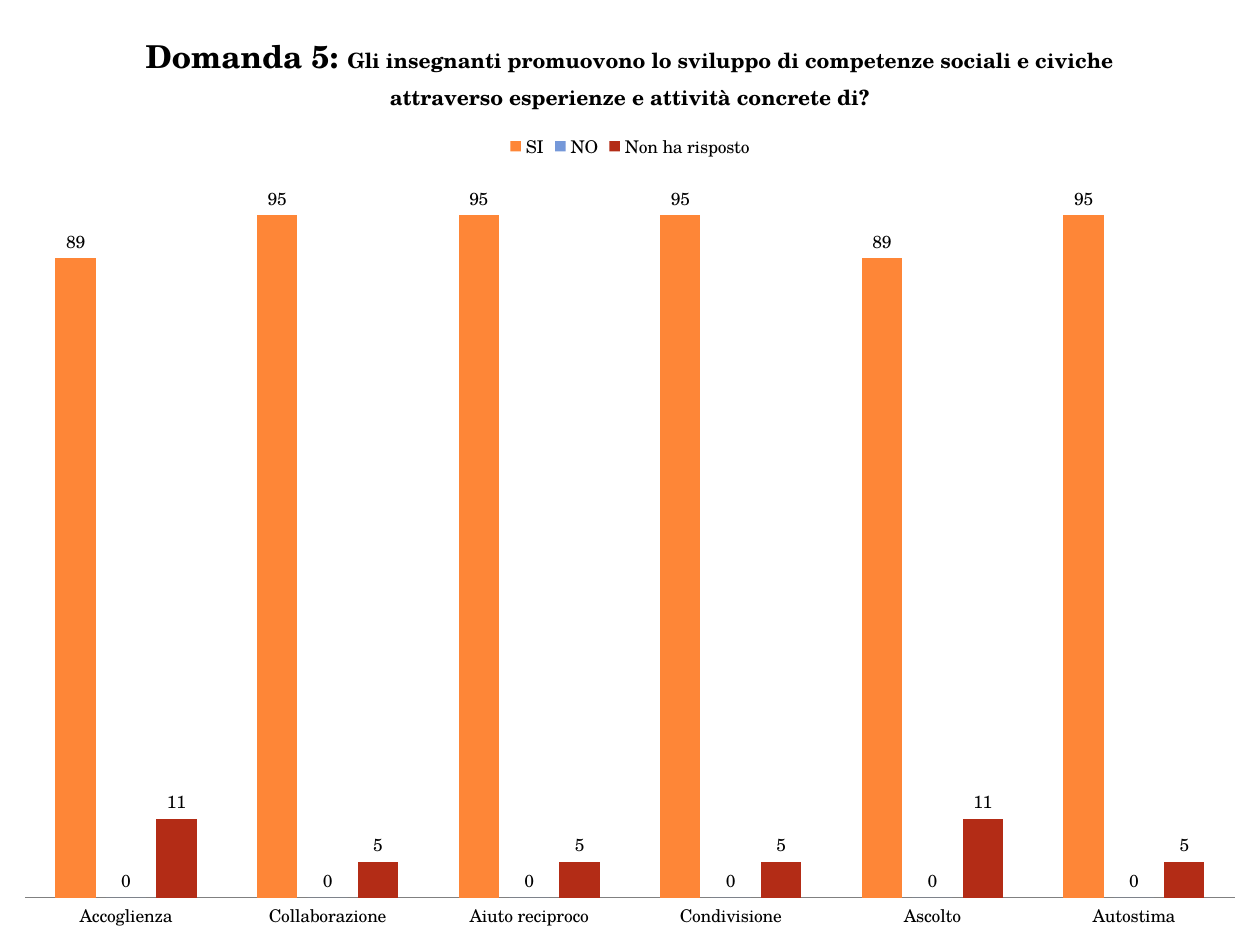
"""Build a slide with a clustered column chart of the answers to question 5."""
from lxml import etree
from pptx import Presentation
from pptx.chart.data import CategoryChartData
from pptx.dml.color import RGBColor
from pptx.enum.chart import XL_CHART_TYPE, XL_LABEL_POSITION, XL_LEGEND_POSITION, XL_TICK_MARK
from pptx.oxml.ns import qn
from pptx.util import Inches, Pt

COLUMNS = XL_CHART_TYPE.COLUMN_CLUSTERED
OUTSIDE = XL_LABEL_POSITION.OUTSIDE_END
TOP = XL_LEGEND_POSITION.TOP
NO_TICK = XL_TICK_MARK.NONE

THEME = {
    "font": "TeX Gyre Schola",
    "text": RGBColor.from_string("000000"),
    "axis": RGBColor.from_string("808080"),
    "heading": Pt(18),
    "question": Pt(12),
    "body": Pt(10),
}
CATEGORIES = ["Accoglienza", "Collaborazione", "Aiuto reciproco",
              "Condivisione", "Ascolto", "Autostima"]
SERIES = [
    ("SI", [89, 95, 95, 95, 89, 95], "FE8637"),
    ("NO", [0] * 6, "7598D9"),
    ("Non ha risposto", [11, 5, 5, 5, 11, 5], "B32C16"),
]


def add_run(p, text, size, bold=False):
    r = p.add_run()
    r.text = text
    r.font.name = THEME["font"]
    r.font.size = size
    r.font.bold = bold
    r.font.color.rgb = THEME["text"]


def set_layout(parent, **values):
    layout = parent.find(qn("c:layout"))
    if layout is None:
        layout = etree.Element(qn("c:layout"))
        parent.insert(1 if parent.tag == qn("c:legend") else 0, layout)
    manual = etree.SubElement(layout, qn("c:manualLayout"))
    for name, value in values.items():
        etree.SubElement(manual, qn(f"c:{name}")).set("val", str(value))


prs = Presentation()
prs.slide_width, prs.slide_height = Inches(10), Inches(7.5)
s = prs.slides.add_slide(prs.slide_layouts[6])

data = CategoryChartData(number_format="0")
data.categories = CATEGORIES
for name, values, color in SERIES:
    data.add_series(name, values)
chart = s.shapes.add_chart(COLUMNS, 0, 0, prs.slide_width, prs.slide_height, data).chart
chart.font.name = THEME["font"]
chart.font.size = THEME["body"]
chart.font.color.rgb = THEME["text"]

p = chart.chart_title.text_frame.paragraphs[0]
add_run(p, "Domanda 5: ", THEME["heading"], bold=True)
add_run(p, "Gli insegnanti promuovono lo sviluppo di competenze sociali e civiche "
           "attraverso esperienze e attività concrete di?", THEME["question"], bold=True)
chart.chart_title.include_in_layout = False

chart.has_legend = True
chart.legend.position = TOP
chart.legend.include_in_layout = False

plot = chart.plots[0]
plot.gap_width, plot.overlap = 150, -25
plot.vary_by_categories = False
for series, (name, values, color) in zip(plot.series, SERIES):
    series.format.fill.solid()
    series.format.fill.fore_color.rgb = RGBColor.from_string(color)
    labels = series.data_labels
    labels.show_value = True
    labels.number_format, labels.number_format_is_linked = "0", False
    labels.position = OUTSIDE

axis = chart.category_axis
axis.major_tick_mark = axis.minor_tick_mark = NO_TICK
axis.format.line.color.rgb = THEME["axis"]
axis.format.line.width = Pt(1)
axis = chart.value_axis
axis.minimum_scale, axis.maximum_scale = 0, 100
axis.has_major_gridlines = False
axis.visible = False

plot_area = chart.element.chart.plotArea
set_layout(plot_area, layoutTarget="inner", xMode="edge", yMode="edge",
           x=0.02, y=0.19, w=0.96, h=0.76)

prs.save("out.pptx")
